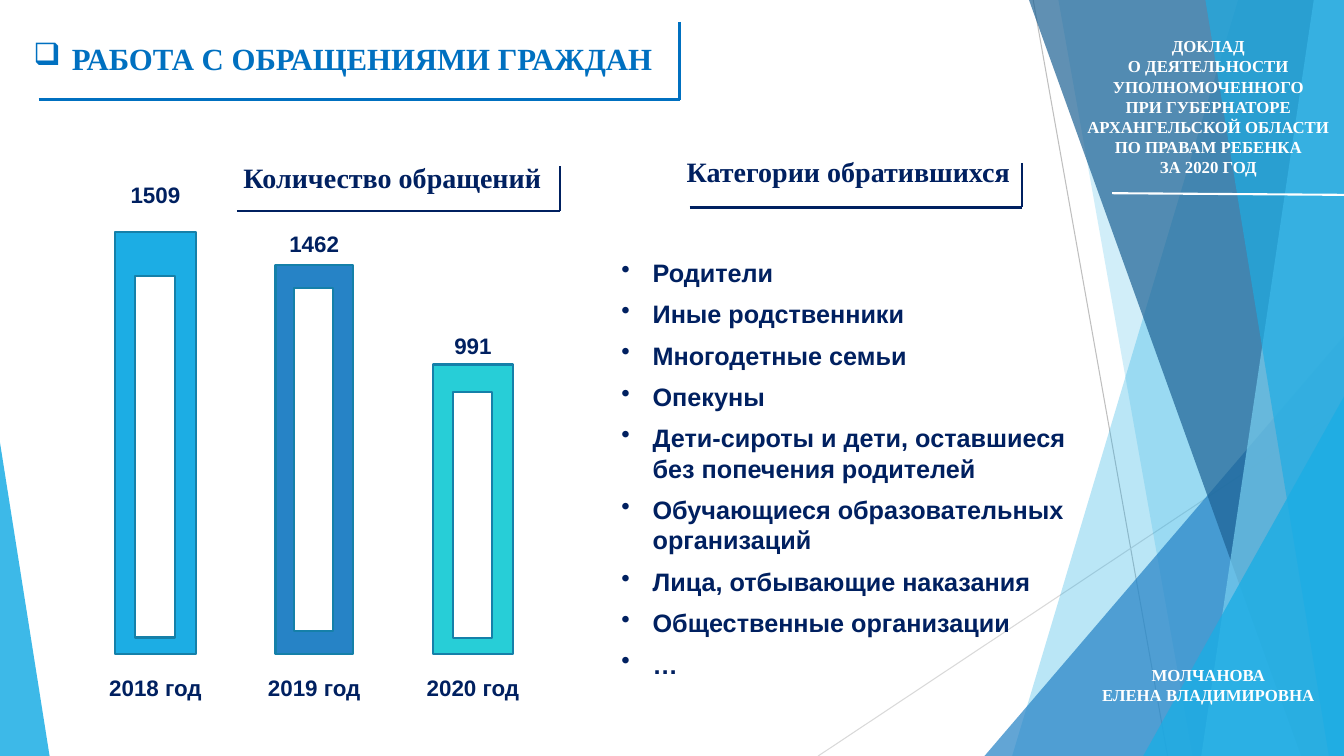
from lxml import etree
from pptx import Presentation
from pptx.dml.color import RGBColor
from pptx.enum.shapes import MSO_CONNECTOR, MSO_SHAPE
from pptx.enum.text import MSO_AUTO_SIZE, PP_ALIGN
from pptx.oxml.ns import qn
from pptx.util import Inches, Pt

LINE = MSO_CONNECTOR.STRAIGHT
RECT = MSO_SHAPE.RECTANGLE
TRI = MSO_SHAPE.ISOSCELES_TRIANGLE
LEFT, MID = PP_ALIGN.LEFT, PP_ALIGN.CENTER
FIT = MSO_AUTO_SIZE.SHAPE_TO_FIT_TEXT

WHITE = RGBColor(0xFF, 0xFF, 0xFF)
NAVY = RGBColor(0x00, 0x20, 0x60)
BLUE = RGBColor(0x00, 0x70, 0xC0)
SKY = RGBColor(0x1C, 0xAD, 0xE4)
PALE = RGBColor(0x77, 0xCE, 0xEF)
AZURE = RGBColor(0x26, 0x83, 0xC6)
STEEL = RGBColor(0x1D, 0x62, 0x94)
TEAL = RGBColor(0x27, 0xCE, 0xD7)
EDGE = RGBColor(0x15, 0x80, 0xA9)
GRAY = RGBColor(0xBF, 0xBF, 0xBF)
LIGHT = RGBColor(0xD9, 0xD9, 0xD9)

SERIF, SANS = "Times New Roman", "Arial"
COLS, ROWS = 160, 90
WIDE, HIGH = Inches(13.33), Inches(7.5)
BASE = 77.9

SHARDS = [
    (147.4, 120.5, SKY, 30),
    (126, 142, SKY, 20),
    (122.5, 154.9, STEEL, 70),
    (156.4, 143, PALE, 70),
    (143.5, 158.2, SKY, 65),
]
BARS = [
    ("2018 год", "1509", SKY, 9.7, 27.6, 21, 32.9, 75.9),
    ("2019 год", "1462", AZURE, 9.2, 31.6, 26.8, 34.3, 75.1),
    ("2020 год", "991", TEAL, 9.5, 43.4, 39, 46.7, 76),
]
GROUPS = [
    "Родители",
    "Иные родственники",
    "Многодетные семьи",
    "Опекуны",
    "Дети-сироты и дети, оставшиеся без попечения родителей",
    "Обучающиеся образовательных организаций",
    "Лица, отбывающие наказания",
    "Общественные организации",
    "…",
]
REPORT = ("ДОКЛАД\vО ДЕЯТЕЛЬНОСТИ УПОЛНОМОЧЕННОГО\vПРИ ГУБЕРНАТОРЕ "
          "АРХАНГЕЛЬСКОЙ ОБЛАСТИ\vПО ПРАВАМ РЕБЕНКА\vЗА 2020 ГОД")
AUTHOR = "МОЛЧАНОВА\vЕЛЕНА ВЛАДИМИРОВНА"


def col(n):
    """Turn grid columns into a length."""
    return round(WIDE * n / COLS)


def row(n):
    """Turn grid rows into a length."""
    return round(HIGH * n / ROWS)


def area(x, y, w, h):
    """Turn a grid box into left, top, width and height."""
    return col(x), row(y), col(w), row(h)


def paint(shape, color, alpha=100, edge=None):
    """Fill a shape, with transparency or an edge if asked."""
    shape.shadow.inherit = False
    shape.fill.solid()
    shape.fill.fore_color.rgb = color
    if alpha < 100:
        tone = shape.fill._xPr.find(".//" + qn("a:srgbClr"))
        etree.SubElement(tone, qn("a:alpha"), val=str(alpha * 1000))
    if edge is None:
        shape.line.fill.background()
    else:
        shape.line.color.rgb = edge
        shape.line.width = Pt(1.5)


def stroke(slide, x1, y1, x2, y2, color, width):
    """Draw a straight line between two grid points."""
    line = slide.shapes.add_connector(LINE, col(x1), row(y1), col(x2), row(y2))
    line.line.color.rgb = color
    line.line.width = Pt(width)
    etree.SubElement(line._element.spPr, qn("a:effectLst"))


def shard(slide, top, foot, color, alpha):
    """Draw a slanted pane that reaches the right edge."""
    pen = slide.shapes.build_freeform(col(top), 0)
    pen.add_line_segments([(WIDE, 0), (WIDE, HIGH), (col(foot), HIGH)])
    paint(pen.convert_to_shape(), color, alpha)


def wedge(slide, box, lean, color, alpha):
    """Draw a right triangle with its tip at one side."""
    shape = slide.shapes.add_shape(TRI, *area(*box))
    shape.adjustments[0] = lean
    paint(shape, color, alpha)


def block(slide, box, color):
    """Draw an edged rectangle."""
    paint(slide.shapes.add_shape(RECT, *area(*box)), color, edge=EDGE)


def write(slide, box, lines, size, face, color, align=MID, wrap=True):
    """Write bold paragraphs and return them."""
    frame = slide.shapes.add_textbox(*area(*box)).text_frame
    frame.word_wrap = wrap
    frame.auto_size = FIT
    for i, text in enumerate(lines):
        para = frame.add_paragraph() if i else frame.paragraphs[0]
        para.text = text
        para.alignment = align
        font = para.font
        font.size, font.name, font.bold = Pt(size), face, True
        font.color.rgb = color
    return frame.paragraphs


def mark(para, sign, indent):
    """Give a paragraph a bullet and a hanging indent."""
    props = para._p.get_or_add_pPr()
    props.set("marL", str(Inches(indent)))
    props.set("indent", str(-Inches(indent)))
    bullet = etree.Element(qn("a:buChar"), char=sign)
    props.find(qn("a:defRPr")).addprevious(bullet)


def corner(slide, left, right, top, foot, color, width):
    """Draw a rule below and to the right of a heading."""
    stroke(slide, left, foot, right, foot, color, width)
    stroke(slide, right, top, right, foot, color, width)


def decor(slide):
    """Draw the panes at the slide's sides."""
    stroke(slide, 123, 0, 139, 90, GRAY, 0.75)
    stroke(slide, 160, 48.4, 97.4, 90, LIGHT, 0.75)
    for pane in SHARDS[:2]:
        shard(slide, *pane)
    wedge(slide, (117.2, 40, 42.8, 50), 1, AZURE, 72)
    for pane in SHARDS[2:]:
        shard(slide, *pane)
    wedge(slide, (136.1, 47.2, 23.9, 42.8), 1, SKY, 80)
    wedge(slide, (0, 52.7, 5.9, 37.3), 0, SKY, 85)


def bars(slide):
    """Draw the hollow bars with their values and years."""
    for i, (year, count, color, wide, top, tag, hole, end) in enumerate(BARS):
        mid = 18.5 + 18.9 * i
        left = mid - wide / 2
        block(slide, (left, top, wide, BASE - top), color)
        block(slide, (mid - 2.4, hole, 4.7, end - hole), WHITE)
        write(slide, (left, tag, wide, 4.4), [count], 16, SANS, NAVY)
        write(slide, (mid - 7.1, 79.7, 14.2, 4.4), [year], 16, SANS, NAVY)


def main():
    """Build the slide and save it."""
    deck = Presentation()
    deck.slide_width, deck.slide_height = WIDE, HIGH
    slide = deck.slides.add_slide(deck.slide_layouts[6])
    decor(slide)
    write(slide, (127.7, 3.7, 32.3, 18.1), [REPORT], 12, SERIF, WHITE)
    write(slide, (127.7, 78.5, 32.3, 6.2), [AUTHOR], 12, SERIF, WHITE)
    stroke(slide, 132.4, 23, 160, 23.2, WHITE, 1.5)
    bars(slide)

    title = write(slide, (2.8, 1.9, 77.6, 7.9), ["РАБОТА С ОБРАЩЕНИЯМИ ГРАЖДАН"],
                  22, SERIF, BLUE, LEFT)[0]
    title.line_spacing = 1.5
    mark(title, "❑", 0.38)
    corner(slide, 4.6, 80.9, 2.6, 11.9, BLUE, 2.25)

    write(slide, (27.6, 18.5, 38.2, 5.3), ["Количество обращений"],
          20, SERIF, NAVY, wrap=False)
    corner(slide, 28.2, 66.7, 19.8, 25.1, NAVY, 1.5)
    write(slide, (80.4, 17.8, 41.2, 5.3), ["Категории обратившихся"],
          20, SERIF, NAVY, wrap=False)
    corner(slide, 82.1, 121.7, 19.4, 24.7, NAVY, 1.5)

    for para in write(slide, (72.8, 30, 56.2, 57), GROUPS, 18, SANS, NAVY, LEFT):
        para.space_after = Pt(8)
        mark(para, "•", 0.31)
    deck.save("out.pptx")


if __name__ == "__main__":
    main()
